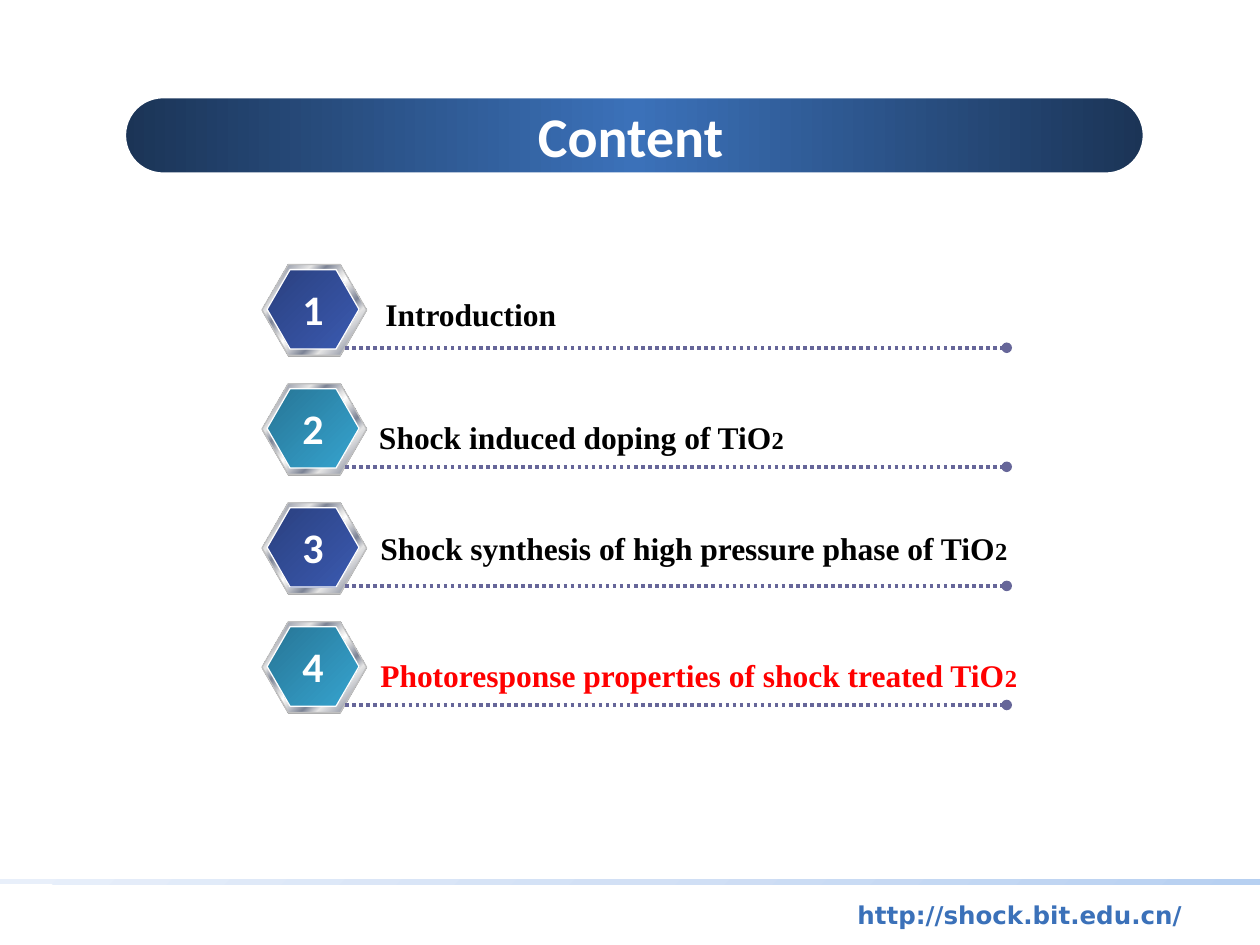
from dataclasses import dataclass
from typing import Any, NamedTuple, Optional

from lxml.etree import SubElement
from pptx import Presentation
from pptx.dml.color import RGBColor
from pptx.enum.dml import MSO_LINE
from pptx.enum.shapes import MSO_CONNECTOR, MSO_SHAPE
from pptx.enum.text import MSO_ANCHOR, MSO_AUTO_SIZE, PP_ALIGN
from pptx.oxml.ns import qn
from pptx.util import Inches, Pt

CELL = 0.1
COLUMNS, ROWS = 100, 75


class Area(NamedTuple):
    column: float
    row: float
    columns: float
    rows: float

    def lengths(self) -> list[int]:
        return [Inches(cells * CELL) for cells in self]

    def moved(self, rows: float) -> "Area":
        return self._replace(row=self.row + rows)


class Gradient(NamedTuple):
    stops: tuple[tuple[int, str], ...]
    angle: Optional[int] = 0


class Outline(NamedTuple):
    color: str
    width: float


class TextStyle(NamedTuple):
    font: str
    size: int
    color: str


@dataclass(frozen=True)
class Theme:
    white: str = "FFFFFF"
    black: str = "000000"
    highlight: str = "FF0000"
    shade: str = "808080"
    rim: str = "C0C0C0"
    rule: str = "666699"
    accent: str = "3B71B9"
    title_size: int = 32
    number_size: int = 24
    label_size: int = 18
    small_size: int = 14
    heading_font: str = "Calibri"
    label_font: str = "Times New Roman"
    footer_font: str = "DejaVu Sans"
    banner: Gradient = Gradient(((0, "1B3456"), (50, "3B71B9"), (100, "1B3456")))
    band: Gradient = Gradient(((0, "B7D0F1"), (50, "D2E0F5"), (100, "E8EFFA")), None)
    blue: Gradient = Gradient(((0, "2A407F"), (100, "3B5AB1")), 45)
    teal: Gradient = Gradient(((0, "277595"), (100, "36A4D0")), 45)
    metal: Gradient = Gradient(
        ((0, "E6E6E6"), (7, "7D8496"), (26, "E6E6E6"), (34, "7D8496"),
         (46, "E6E6E6"), (50, "FFFFFF"), (54, "E6E6E6"), (66, "7D8496"),
         (74, "E6E6E6"), (93, "7D8496"), (100, "E6E6E6")), 45)


@dataclass(frozen=True)
class Entry:
    text: str
    area: Area
    subscript: str = ""
    color: str = Theme.black
    spacing: float = 1.0
    wrap: bool = False


THEME = Theme()
ROW_PITCH = 9.45
ENTRIES = (
    Entry("Introduction", Area(29.6, 22.9, 15.7, 4)),
    Entry("Shock induced doping of TiO", Area(29.1, 33.3, 34.3, 3.4), "2", spacing=0.8),
    Entry("Shock synthesis of high pressure phase of TiO",
          Area(29.2, 42.1, 52.1, 3.4), "2", spacing=0.8),
    Entry("Photoresponse properties of shock treated TiO",
          Area(29.2, 51.6, 53.9, 4), "2", THEME.highlight, wrap=True),
)


def apply_format(target: Any, values: dict[str, Any]) -> None:
    for name, value in values.items():
        setattr(target, name, value)


def fill_gradient(shape: Any, gradient: Gradient) -> None:
    shape.fill.background()
    empty_fill = shape._element.spPr.find(qn("a:noFill"))
    element = empty_fill.makeelement(qn("a:gradFill"), {"rotWithShape": "1"})
    empty_fill.getparent().replace(empty_fill, element)
    stop_list = SubElement(element, qn("a:gsLst"))
    for position, color in gradient.stops:
        stop = SubElement(stop_list, qn("a:gs"), pos=str(position * 1000))
        SubElement(stop, qn("a:srgbClr"), val=color)
    if gradient.angle is None:
        radial = SubElement(element, qn("a:path"), {"path": "circle"})
        SubElement(radial, qn("a:fillToRect"), l="100000", t="100000")
    else:
        SubElement(element, qn("a:lin"), ang=str(gradient.angle * 60000), scaled="0")


def draw_shape(shapes: Any, kind: MSO_SHAPE, area: Area, fill: str | Gradient,
               outline: Optional[Outline] = None, adjustment: Optional[float] = None) -> Any:
    shape = shapes.add_shape(kind, *area.lengths())
    shape.shadow.inherit = False
    if adjustment is not None:
        shape.adjustments[0] = adjustment
    if isinstance(fill, Gradient):
        fill_gradient(shape, fill)
    else:
        shape.fill.solid()
        shape.fill.fore_color.rgb = RGBColor.from_string(fill)
    if outline is None:
        shape.line.fill.background()
    else:
        shape.line.color.rgb = RGBColor.from_string(outline.color)
        shape.line.width = Pt(outline.width)
    return shape


def draw_text(shapes: Any, area: Area, runs: list[tuple[str, TextStyle]],
              frame_format: dict[str, Any], paragraph_format: dict[str, Any]) -> None:
    frame = shapes.add_textbox(*area.lengths()).text_frame
    apply_format(frame, frame_format)
    paragraph = frame.paragraphs[0]
    apply_format(paragraph, paragraph_format)
    for text, style in runs:
        run = paragraph.add_run()
        run.text = text
        apply_format(run.font, {"name": style.font, "size": Pt(style.size), "bold": True})
        run.font.color.rgb = RGBColor.from_string(style.color)


def draw_rule(shapes: Any, start: float, end: float, row: float) -> None:
    x_start, x_end, y = (Inches(cells * CELL) for cells in (start, end, row))
    rule = shapes.add_connector(MSO_CONNECTOR.STRAIGHT, x_start, y, x_end, y)
    rule.line.color.rgb = RGBColor.from_string(THEME.rule)
    apply_format(rule.line, {"width": Pt(2), "dash_style": MSO_LINE.ROUND_DOT})
    SubElement(rule.line._get_or_add_ln(), qn("a:tailEnd"), type="oval")
    SubElement(rule._element.spPr, qn("a:effectLst"))


def draw_entry(shapes: Any, index: int, entry: Entry) -> None:
    offset = index * ROW_PITCH
    group = shapes.add_group_shape().shapes
    rim = Area(20.8, 21, 8.3, 7.2).moved(offset)
    face = Area(21.2, 21.4, 7.3, 6.3).moved(offset)
    layers = (
        (rim.moved(0.1), THEME.shade, None),
        (rim, THEME.metal, Outline(THEME.rim, 0.75)),
        (face, (THEME.blue, THEME.teal)[index % 2], Outline(THEME.white, 0.75)),
    )
    for area, fill, outline in layers:
        draw_shape(group, MSO_SHAPE.HEXAGON, area, fill, outline, 0.289)
    draw_rule(group, 27.4, 79.9, 27.6 + offset)
    fitted = {"auto_size": MSO_AUTO_SIZE.SHAPE_TO_FIT_TEXT, "word_wrap": False}
    number_style = TextStyle(THEME.heading_font, THEME.number_size, THEME.white)
    draw_text(group, Area(23, 22, 3.7, 5.1).moved(offset), [(str(index + 1), number_style)],
              fitted, {"alignment": PP_ALIGN.CENTER})
    label_style = TextStyle(THEME.label_font, THEME.label_size, entry.color)
    runs = [(entry.text, label_style)]
    if entry.subscript:
        runs.append((entry.subscript, label_style._replace(size=THEME.small_size)))
    draw_text(shapes, entry.area, runs, fitted | {"word_wrap": entry.wrap},
              {"line_spacing": entry.spacing})


def main() -> None:
    presentation = Presentation()
    apply_format(presentation, {"slide_width": Inches(COLUMNS * CELL),
                                "slide_height": Inches(ROWS * CELL)})
    slide = presentation.slides.add_slide(presentation.slide_layouts[6])
    shapes = slide.shapes
    band = draw_shape(shapes, MSO_SHAPE.RECTANGLE, Area(0, 69.8, COLUMNS, 0.4), THEME.band)
    band._element.spPr.xfrm.set("flipV", "1")
    draw_shape(shapes, MSO_SHAPE.ROUNDED_RECTANGLE, Area(9.8, 7.6, 81.1, 6.3),
               THEME.banner, Outline(THEME.white, 3), 0.5)
    draw_text(shapes, Area(4.3, 70.9, 90.5, 2.8),
              [("http://shock.bit.edu.cn/",
                TextStyle(THEME.footer_font, THEME.small_size, THEME.accent))],
              {"word_wrap": True}, {"alignment": PP_ALIGN.RIGHT})
    draw_text(shapes, Area(11.4, 7.6, 77.3, 6.3),
              [("Content", TextStyle(THEME.heading_font, THEME.title_size, THEME.white))],
              {"word_wrap": True, "vertical_anchor": MSO_ANCHOR.MIDDLE},
              {"alignment": PP_ALIGN.CENTER})
    for index, entry in enumerate(ENTRIES):
        draw_entry(shapes, index, entry)
    presentation.save("out.pptx")


if __name__ == "__main__":
    main()
